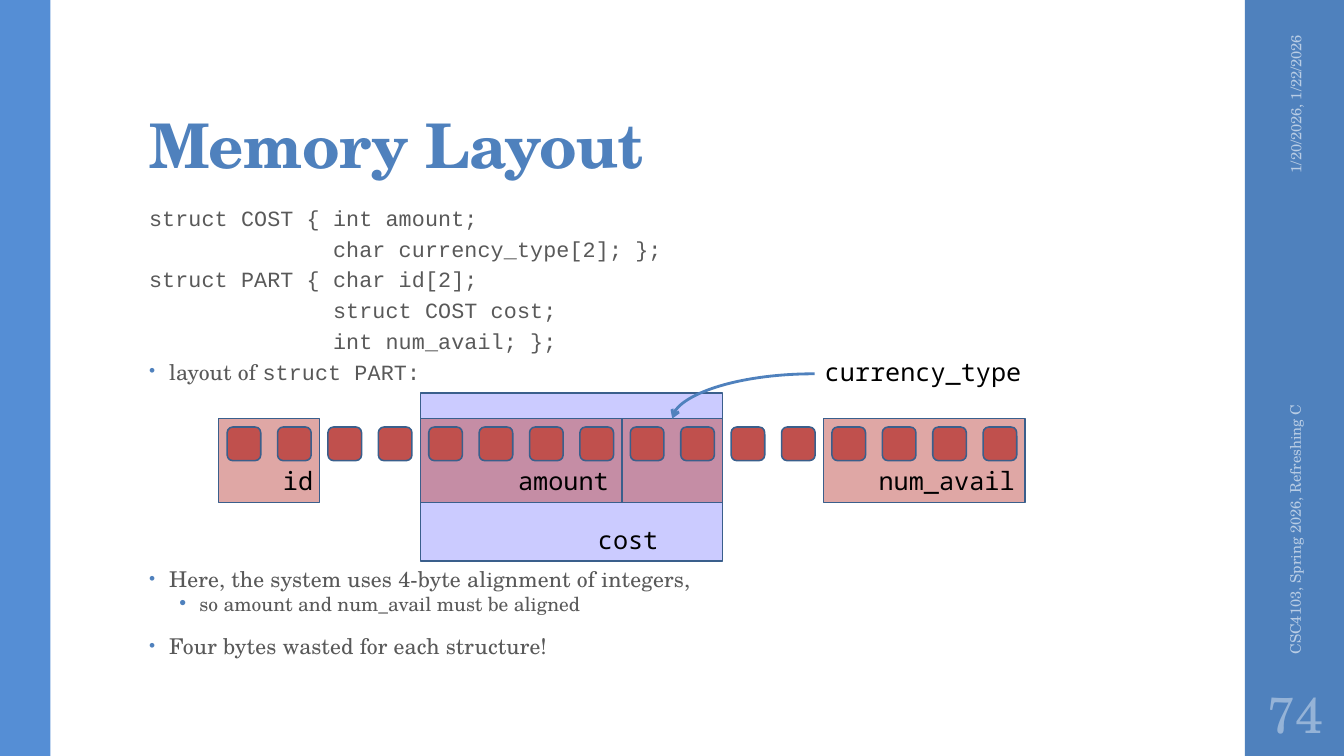
from pptx import Presentation
from pptx.dml.color import RGBColor
from pptx.enum.shapes import MSO_CONNECTOR as Connector, MSO_SHAPE as Shape
from pptx.enum.text import MSO_ANCHOR as Anchor, PP_ALIGN as Align
from pptx.oxml.ns import qn
from pptx.util import Pt
from lxml.etree import SubElement

SERIF, COURIER, MONO = "TeX Gyre Schola", "Courier New", "Noto Sans Mono"
BLUE, GREY, RED, OUTLINE = "4F81BD", "595959", "C0504D", "3A5F8C"

TITLE = "Memory Layout"
CODE = [
    "struct COST { int amount;",
    "              char currency_type[2]; };",
    "struct PART { char id[2];",
    "              struct COST cost;",
    "              int num_avail; };",
]
# Paragraphs: level (None is code), space before, runs of (text, font)
DECLARATIONS = [(None, 6, [(line, COURIER)]) for line in CODE] + [
    (0, 6, [("layout of ", SERIF), ("struct PART:", COURIER)])]
REMARKS = [
    (0, 14, [("Here, the system uses 4-byte alignment of integers,", SERIF)]),
    (1, 3, [("so amount and num_avail must be aligned", SERIF)]),
    (0, 14, [("Four bytes wasted for each structure!", SERIF)]),
]
# Level: size, indent, line spacing, space after, bullet percent, tracking
LEVELS = {None: (15.5, 0, 0.75, 2, None, 10),
          0: (15.5, 14.4, 0.75, 2, 80, 10),
          1: (13.9, 36, 0.7, 3, 100, 0)}
HANGING = 14.4

BYTE_COUNT = 16
FIELDS = [(12, 4), (8, 2), (4, 4), (0, 2)]  # first byte, number of bytes
COST = (4, 6)
MEMORY_LEFT, PITCH, BYTE = 156.25, 36, 24
FIELD_TOP, FIELD_HEIGHT = 299, 60
COST_TOP, COST_HEIGHT = 280.8, 120
LABELS = [  # text, left, top, width
    ("id", 195, 329, 37), ("amount", 363, 329, 81),
    ("num_avail", 620.5, 329, 113), ("cost", 420, 371, 58),
    ("currency_type", 582, 251, 157),
]
SIDEBAR = [  # text, box, size, colour, alignment, rotation
    ("1/20/2026, 1/22/2026", (850.3, 78.5, 150, 28.8), 10.5, "B9CDE5", Align.RIGHT, 270),
    ("CSC4103, Spring 2026, Refreshing C", (784, 319, 282, 28.8), 10.5, "B9CDE5", Align.LEFT, 270),
    ("74", (889.2, 486, 72, 46.8), 36, "95B3D7", Align.CENTER, 0),
]

prs = Presentation()
prs.slide_width, prs.slide_height = Pt(960), Pt(540)
slide = prs.slides.add_slide(prs.slide_layouts[6])


def rgb(code):
    return RGBColor.from_string(code)


def add_block(kind, left, top, width, height, fill, line=None, alpha=None):
    block = slide.shapes.add_shape(kind, Pt(left), Pt(top), Pt(width), Pt(height))
    block.shadow.inherit = False
    block.fill.solid()
    block.fill.fore_color.rgb = rgb(fill)
    if alpha:
        color = block._element.spPr.find(qn("a:solidFill"))[0]
        SubElement(color, qn("a:alpha"), val=str(alpha * 1000))
    if line:
        block.line.color.rgb = rgb(line)
        block.line.width = Pt(1.1)
    else:
        block.line.fill.background()


def add_box(left, top, width, height, anchor=Anchor.TOP, wrap=True):
    box = slide.shapes.add_textbox(Pt(left), Pt(top), Pt(width), Pt(height))
    box.text_frame.word_wrap = wrap
    box.text_frame.vertical_anchor = anchor
    return box


def add_run(paragraph, text, font, size, color, tracking=0, bold=False):
    run = paragraph.add_run()
    run.text = text
    run.font.name, run.font.size, run.font.bold = font, Pt(size), bold
    run.font.color.rgb = rgb(color)
    if tracking:
        run._r.get_or_add_rPr().set("spc", str(tracking))


def add_bullet(paragraph, indent, percent):
    props = paragraph._p.get_or_add_pPr()
    props.set("marL", str(Pt(indent)))
    props.set("indent", str(-Pt(HANGING)))
    SubElement(SubElement(props, qn("a:buClr")), qn("a:srgbClr"), val=BLUE)
    SubElement(props, qn("a:buSzPct"), val=str(percent * 1000))
    SubElement(props, qn("a:buFont"), typeface="Arial")
    SubElement(props, qn("a:buChar"), char="•")


def add_body(paragraphs, top, height):
    frame = add_box(99.4, top, 676.8, height).text_frame
    for i, (level, before, runs) in enumerate(paragraphs):
        size, indent, spacing, after, percent, tracking = LEVELS[level]
        paragraph = frame.add_paragraph() if i else frame.paragraphs[0]
        paragraph.line_spacing = spacing
        paragraph.space_before = Pt(before if i else 0)
        paragraph.space_after = Pt(after)
        if percent:
            add_bullet(paragraph, indent, percent)
        for text, font in runs:
            add_run(paragraph, text, font, size, GREY, tracking)


def add_pointer(start, end):
    """Curved arrow that leaves sideways and arrives from above."""
    pointer = slide.shapes.add_connector(
        Connector.CURVE, *(Pt(value) for value in start + end))
    pointer.line.color.rgb = rgb(BLUE)
    pointer.line.width = Pt(2)
    props = pointer._element.spPr
    props.find(qn("a:prstGeom")).set("prst", "curvedConnector2")
    SubElement(props.find(qn("a:ln")), qn("a:tailEnd"), type="arrow")
    SubElement(props, qn("a:effectLst"))


add_block(Shape.RECTANGLE, 889.2, 0, 72, 540, BLUE)
add_block(Shape.RECTANGLE, 0, 0, 36, 540, "558ED5")

heading = add_box(99.4, 23, 763.2, 110.2, Anchor.BOTTOM).text_frame
heading.margin_top = Pt(2.2)
heading.paragraphs[0].line_spacing = 0.9
add_run(heading.paragraphs[0], TITLE, SERIF, 44, BLUE, -50, True)

add_body(DECLARATIONS, 147, 130)
add_body(REMARKS, 405, 75)

first, count = COST
add_block(Shape.RECTANGLE, MEMORY_LEFT + first * PITCH, COST_TOP,
          count * PITCH, COST_HEIGHT, "9999FF", OUTLINE, 50)
for first, count in FIELDS:
    add_block(Shape.RECTANGLE, MEMORY_LEFT + first * PITCH, FIELD_TOP,
              count * PITCH, FIELD_HEIGHT, RED, OUTLINE, 50)
for i in range(BYTE_COUNT):
    add_block(Shape.ROUNDED_RECTANGLE, MEMORY_LEFT + i * PITCH + (PITCH - BYTE) / 2,
              FIELD_TOP + 6, BYTE, BYTE, RED, OUTLINE)

for text, left, top, width in LABELS:
    label = add_box(left, top, width, 29, wrap=False)
    add_run(label.text_frame.paragraphs[0], text, MONO, 18, "000000")
add_pointer((582, 267), (480.25, 299))

for text, place, size, color, align, rotation in SIDEBAR:
    box = add_box(*place, Anchor.MIDDLE)
    box.rotation = rotation
    frame = box.text_frame
    if not rotation:
        frame.margin_left = frame.margin_right = Pt(3.6)
    frame.paragraphs[0].alignment = align
    add_run(frame.paragraphs[0], text, SERIF, size, color)

prs.save("out.pptx")
